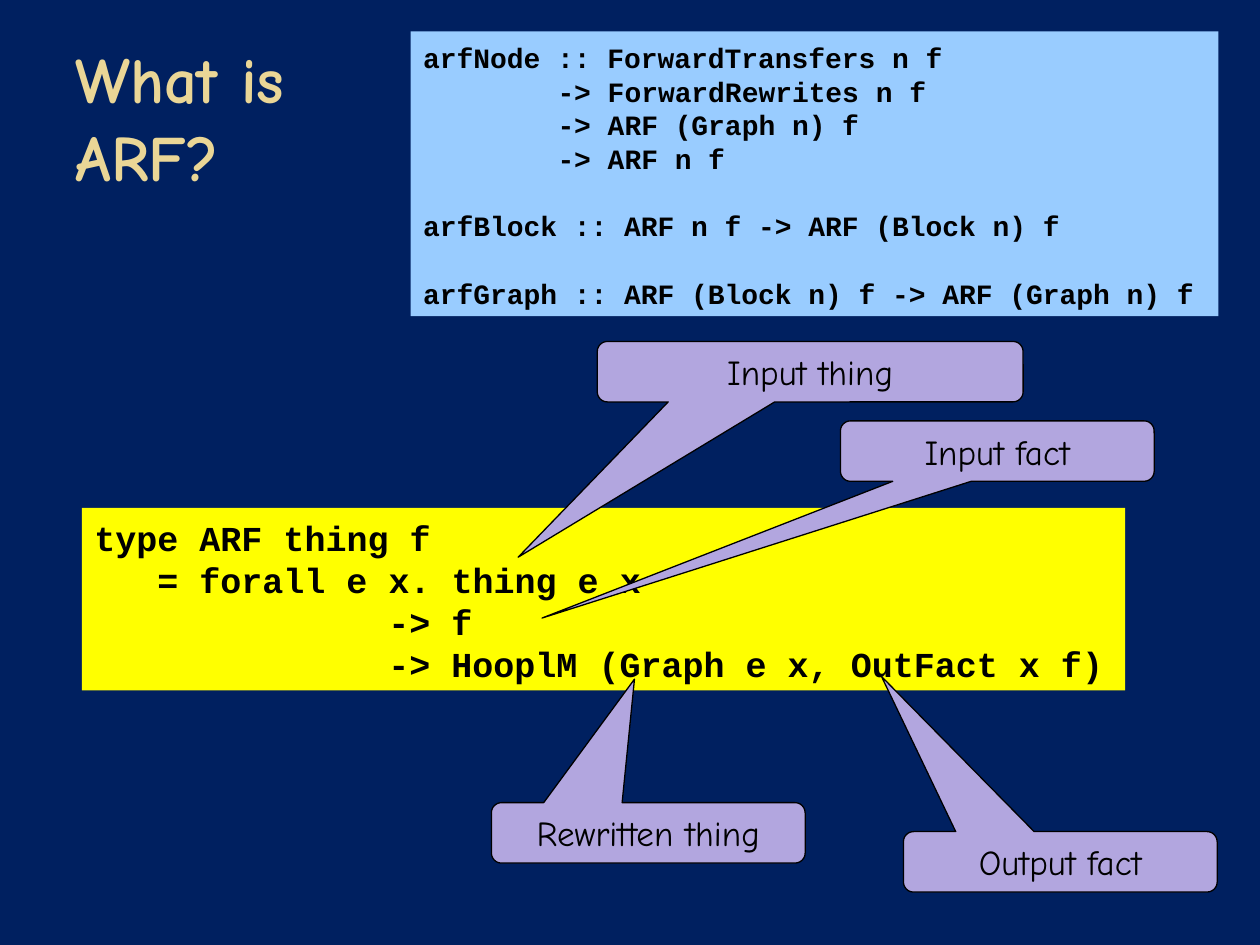
from pptx import Presentation
from pptx.dml.color import RGBColor
from pptx.enum.shapes import MSO_SHAPE
from pptx.enum.text import MSO_ANCHOR, PP_ALIGN
from pptx.util import Inches, Pt

RECTANGLE = MSO_SHAPE.RECTANGLE
CALLOUT = MSO_SHAPE.ROUNDED_RECTANGULAR_CALLOUT
MIDDLE, TOP = MSO_ANCHOR.MIDDLE, MSO_ANCHOR.TOP
LEFT, CENTER = PP_ALIGN.LEFT, PP_ALIGN.CENTER

COLORS = {
    "background": "002060",
    "title": "EAD696",
    "signatures": "99CCFF",
    "definition": "FFFF00",
    "callout": "B2A6DF",
    "ink": "000000",
}
TEXT_FONT, CODE_FONT = "Comic Neue", "Courier New"


def add_box(kind, box, fill):
    shape = slide.shapes.add_shape(kind, *[Inches(length) for length in box])
    shape.shadow.inherit = False
    shape.fill.solid()
    shape.fill.fore_color.rgb = RGBColor.from_string(COLORS[fill])
    shape.line.fill.background()
    shape.text_frame.word_wrap = True
    return shape


def add_run(paragraph, text, font, size, color="ink", bold=False):
    run = paragraph.add_run()
    run.text = text
    run.font.name = font
    run.font.size = Pt(size)
    run.font.bold = bold
    run.font.color.rgb = RGBColor.from_string(COLORS[color])


presentation = Presentation()
presentation.slide_width = Inches(10)
presentation.slide_height = Inches(7.5)
slide = presentation.slides.add_slide(presentation.slide_layouts[6])
slide.background.fill.solid()
slide.background.fill.fore_color.rgb = RGBColor.from_string(COLORS["background"])

# Title
title = slide.shapes.add_textbox(Inches(0.5), Inches(0.3), Inches(9), Inches(1.25))
title.text_frame.word_wrap = True
title.text_frame.vertical_anchor = MIDDLE
paragraph = title.text_frame.paragraphs[0]
paragraph.line_spacing = Pt(44.5)
add_run(paragraph, "What is", TEXT_FONT, 36.9, "title", True)
paragraph.add_line_break()
add_run(paragraph, "ARF?", TEXT_FONT, 36.9, "title", True)

# Code panels: each line is (indent in characters, blank lines before, text)
panels = [
    ("signatures", (3.26, 0.25, 6.41, 2.26), 16, 19.25, [
        (0, 0, "arfNode :: ForwardTransfers n f"),
        (8, 0, "-> ForwardRewrites n f"),
        (8, 0, "-> ARF (Graph n) f"),
        (8, 0, "-> ARF n f"),
        (0, 1, "arfBlock :: ARF n f -> ARF (Block n) f"),
        (0, 1, "arfGraph :: ARF (Block n) f -> ARF (Graph n) f"),
    ]),
    ("definition", (0.65, 4.03, 8.28, 1.45), 20, 24, [
        (0, 0, "type ARF thing f"),
        (3, 0, "= forall e x. thing e x"),
        (14, 0, "-> f"),
        (14, 0, "-> HooplM (Graph e x, OutFact x f)"),
    ]),
]
for fill, box, size, pitch, lines in panels:
    frame = add_box(RECTANGLE, box, fill).text_frame
    frame.vertical_anchor = TOP
    frame.margin_top = Inches(0.07)
    character_width = 0.6 * size
    for index, (indent, blanks, text) in enumerate(lines):
        paragraph = frame.paragraphs[0] if index == 0 else frame.add_paragraph()
        paragraph.alignment = LEFT
        paragraph.line_spacing = Pt(pitch)
        paragraph.space_before = Pt(blanks * pitch)
        properties = paragraph._p.get_or_add_pPr()
        properties.set("marL", str(Pt(indent * character_width)))
        properties.set("indent", "0")
        add_run(paragraph, text, CODE_FONT, size, bold=True)

# Callouts: text, left, top, width, pointer offset as a share of the size
callouts = [
    ("Input thing", 4.74, 2.71, 3.38, (-0.686, 3.069)),
    ("Input fact", 6.67, 3.34, 2.49, (-1.451, 2.761)),
    ("Rewritten thing", 3.9, 6.37, 2.49, (-0.044, -2.542)),
    ("Output fact", 7.17, 6.6, 2.49, (-0.57, -3.066)),
]
for text, left, top, width, pointer in callouts:
    callout = add_box(CALLOUT, (left, top, width, 0.48), "callout")
    callout.adjustments[0], callout.adjustments[1] = pointer
    callout.line.color.rgb = RGBColor.from_string(COLORS["ink"])
    callout.line.width = Pt(0.75)
    callout.text_frame.vertical_anchor = MIDDLE
    paragraph = callout.text_frame.paragraphs[0]
    paragraph.alignment = CENTER
    add_run(paragraph, text, TEXT_FONT, 20)

presentation.save("out.pptx")
